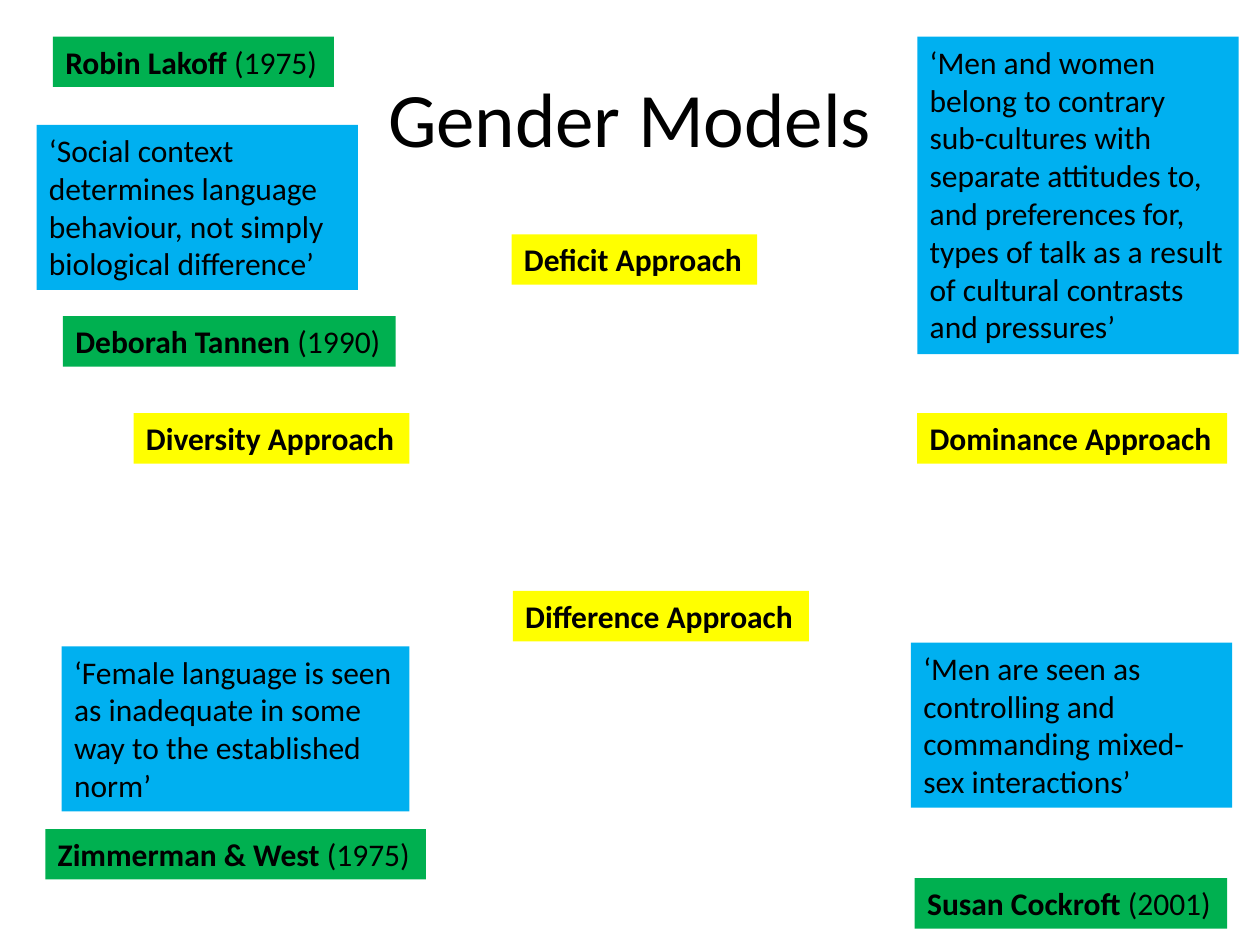
from dataclasses import dataclass, field

from pptx import Presentation
from pptx.dml.color import RGBColor
from pptx.enum.text import MSO_ANCHOR as Anchor, MSO_AUTO_SIZE as AutoSize, PP_ALIGN as Align
from pptx.slide import Slide
from pptx.util import Inches, Pt

COLORS = {"text": "000000", "approach": "FFFF00", "quote": "00B0F0", "author": "00B050"}
LABEL_HEIGHT = 0.4

APPROACHES = [
    ("Deficit Approach", 4.06, 1.86, 1.95),
    ("Dominance Approach", 7.28, 3.28, 2.46),
    ("Difference Approach", 4.07, 4.69, 2.35),
    ("Diversity Approach", 1.06, 3.28, 2.19),
]
QUOTES = [
    ("‘Female language is seen as inadequate in some way to the established norm’",
     0.49, 5.13, 2.76, 1.31),
    ("‘Men are seen as controlling and commanding mixed-sex interactions’",
     7.23, 5.1, 2.55, 1.31),
    ("‘Men and women belong to contrary sub-cultures with separate attitudes to, "
     "and preferences for, types of talk as a result of cultural contrasts and pressures’",
     7.28, 0.29, 2.55, 2.52),
    ("‘Social context determines language behaviour, not simply biological difference’",
     0.29, 0.99, 2.55, 1.31),
]
AUTHORS = [
    ("Robin Lakoff ", "(1975)", 0.42, 0.29, 2.23),
    ("Susan Cockroft ", "(2001)", 7.26, 6.97, 2.48),
    ("Zimmerman & West ", "(1975)", 0.36, 6.58, 3.02),
    ("Deborah Tannen ", "(1990)", 0.5, 2.51, 2.64),
]


@dataclass
class ModelSlide:
    """Draws the title and the coloured cards in one shared style."""

    slide: Slide
    font: str = "Calibri"
    title_size: int = 44
    body_size: int = 18
    colors: dict = field(default_factory=lambda: COLORS)

    def text(self, parts, left, top, width, height, size, wrap=True):
        box = self.slide.shapes.add_textbox(*map(Inches, (left, top, width, height)))
        frame = box.text_frame
        frame.word_wrap = wrap
        for words, bold in parts:
            run = frame.paragraphs[0].add_run()
            run.text = words
            run.font.name = self.font
            run.font.size = Pt(size)
            run.font.bold = bold
            run.font.color.rgb = RGBColor.from_string(self.colors["text"])
        return box

    def title(self, words, *place):
        frame = self.text([(words, False)], *place, self.title_size).text_frame
        frame.vertical_anchor = Anchor.MIDDLE
        frame.paragraphs[0].alignment = Align.CENTER

    def card(self, role, parts, *place, wrap=False):
        box = self.text(parts, *place, self.body_size, wrap)
        box.text_frame.auto_size = AutoSize.SHAPE_TO_FIT_TEXT
        box.fill.solid()
        box.fill.fore_color.rgb = RGBColor.from_string(self.colors[role])

    def approach(self, name, left, top, width):
        self.card("approach", [(name, True)], left, top, width, LABEL_HEIGHT)

    def quote(self, words, *place):
        self.card("quote", [(words, False)], *place, wrap=True)

    def author(self, name, year, left, top, width):
        self.card("author", [(name, True), (year, False)], left, top, width, LABEL_HEIGHT)


def main():
    deck = Presentation()
    deck.slide_width, deck.slide_height = Inches(10), Inches(7.5)
    models = ModelSlide(deck.slides.add_slide(deck.slide_layouts[6]))
    models.title("Gender Models", 0.5, 0.3, 9, 1.25)
    for approach in APPROACHES:
        models.approach(*approach)
    for quote in QUOTES:
        models.quote(*quote)
    for author in AUTHORS:
        models.author(*author)
    deck.save("out.pptx")


if __name__ == "__main__":
    main()
